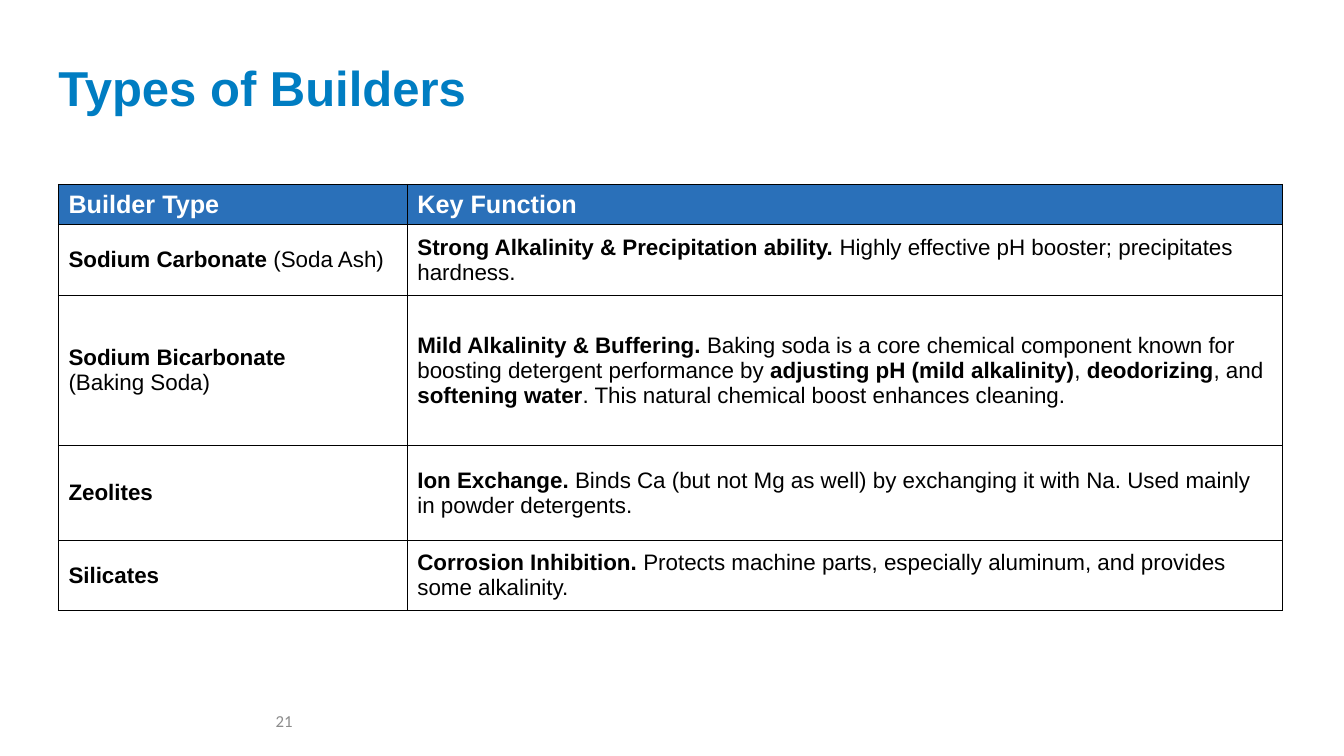
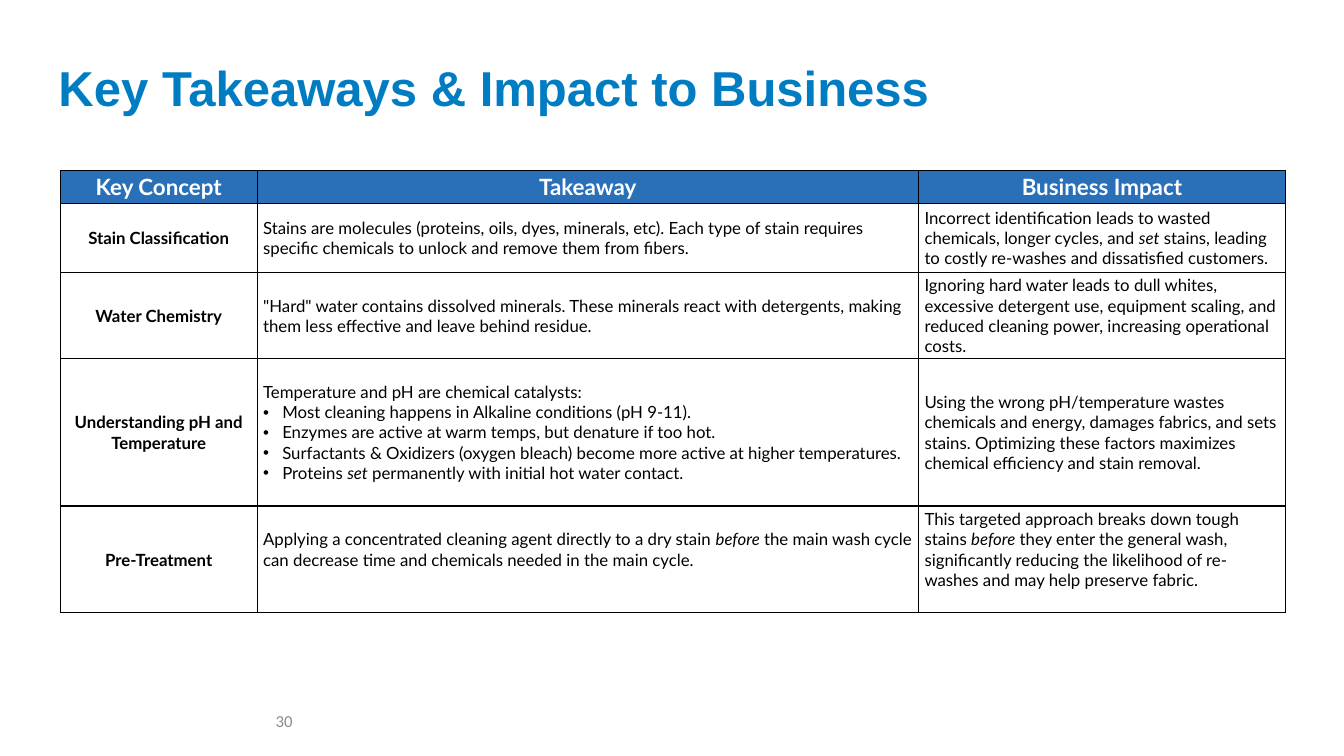
from lxml.etree import SubElement
from pptx import Presentation
from pptx.dml.color import RGBColor
from pptx.enum.text import MSO_ANCHOR, PP_ALIGN
from pptx.oxml import parse_xml
from pptx.oxml.ns import nsdecls, qn
from pptx.util import Inches, Pt

COLORS = {"title": "007DC2", "head": "2A70B9", "white": "FFFFFF",
          "text": "000000", "number": "8C8C8C"}

# Asterisks enclose the emphasised words; a leading "• " makes a bullet.
SLIDES = [
    {
        "title": "Types of Builders", "number": "21",
        "at": (0.58, 1.83), "cols": [3.46, 8.68],
        "heights": [0.38, 0.7, 1.49, 0.94, 0.7],
        "font": "Arial", "sizes": (18, 16), "mark": "bold",
        "pad": (0.1, 0.05), "center": False, "tail": {},
        "rows": [
            ["Builder Type", "Key Function"],
            ["*Sodium Carbonate* (Soda Ash)",
             "*Strong Alkalinity & Precipitation ability.* Highly effective pH booster; "
             "precipitates hardness."],
            ["*Sodium Bicarbonate*\n(Baking Soda)",
             "*Mild Alkalinity & Buffering.* Baking soda is a core chemical component known for "
             "boosting detergent performance by *adjusting pH (mild alkalinity)*, *deodorizing*, "
             "and *softening water*. This natural chemical boost enhances cleaning."],
            ["*Zeolites*",
             "*Ion Exchange.* Binds Ca (but not Mg as well) by exchanging it with Na. "
             "Used mainly in powder detergents."],
            ["*Silicates*",
             "*Corrosion Inhibition.* Protects machine parts, especially aluminum, and provides "
             "some alkalinity."],
        ],
    },
    {
        "title": "Key Takeaways & Impact to Business", "number": "30",
        "at": (0.6, 1.69), "cols": [1.95, 6.56, 3.64],
        "heights": [0.33, 0.68, 0.86, 1.46, 1.06],
        "font": "Lato", "sizes": (16, 12), "mark": "italic",
        "pad": (0.06, 0.03), "center": True, "tail": {(4, 1): 0.23, (4, 2): 0.23},
        "rows": [
            ["Key Concept", "Takeaway", "Business Impact"],
            ["Stain Classification",
             "Stains are molecules (proteins, oils, dyes, minerals, etc). Each type of stain "
             "requires specific chemicals to unlock and remove them from fibers.",
             "Incorrect identification leads to wasted chemicals, longer cycles, and *set* stains, "
             "leading to costly re-washes and dissatisfied customers."],
            ["Water Chemistry",
             "\"Hard\" water contains dissolved minerals. These minerals react with detergents, "
             "making them less effective and leave behind residue.",
             "Ignoring hard water leads to dull whites, excessive detergent use, equipment "
             "scaling, and reduced cleaning power, increasing operational costs."],
            ["Understanding pH and Temperature",
             "Temperature and pH are chemical catalysts:\n"
             "• Most cleaning happens in Alkaline conditions (pH 9-11).\n"
             "• Enzymes are active at warm temps, but denature if too hot.\n"
             "• Surfactants & Oxidizers (oxygen bleach) become more active at higher "
             "temperatures.\n"
             "• Proteins *set* permanently with initial hot water contact.",
             "Using the wrong pH/temperature wastes chemicals and energy, damages fabrics, and "
             "sets stains. Optimizing these factors maximizes chemical efficiency and stain "
             "removal."],
            ["Pre-Treatment",
             "Applying a concentrated cleaning agent directly to a dry stain *before* the main "
             "wash cycle can decrease time and chemicals needed in the main cycle.",
             "This targeted approach breaks down tough stains *before* they enter the general "
             "wash, significantly reducing the likelihood of re-washes and may help preserve "
             "fabric."],
        ],
    },
]


def style(font, name, size, color, bold=False):
    font.name, font.size, font.bold = name, Pt(size), bold
    font.color.rgb = RGBColor.from_string(COLORS[color])


def place(shape, left, top, width, height):
    shape.left, shape.top = Inches(left), Inches(top)
    shape.width, shape.height = Inches(width), Inches(height)


def add_title(slide, text):
    title = slide.shapes.title
    place(title, 0.48, 0.17, 10.51, 1.45)
    frame = title.text_frame
    frame.text = text
    frame.word_wrap = True
    frame.vertical_anchor = MSO_ANCHOR.MIDDLE
    para = frame.paragraphs[0]
    para.alignment, para.line_spacing = PP_ALIGN.LEFT, 0.9
    style(para.runs[0].font, "Arial", 35, "title", True)


def add_number(slide, text):
    box = slide.shapes.add_textbox(0, Inches(6.95), Inches(3), Inches(0.4))
    frame = box.text_frame
    frame.text = text
    frame.word_wrap = True
    frame.vertical_anchor = MSO_ANCHOR.MIDDLE
    para = frame.paragraphs[0]
    para.alignment = PP_ALIGN.RIGHT
    style(para.runs[0].font, "Calibri", 12, "number")


def add_bullet(para):
    props = para._p.get_or_add_pPr()
    props.set("marL", str(Inches(0.19)))
    props.set("indent", str(-Inches(0.19)))
    SubElement(props, qn("a:buFont"), typeface="Arial")
    SubElement(props, qn("a:buChar"), char="•")


def add_border(cell):
    props = cell._tc.get_or_add_tcPr()
    for side in "LRTB":
        props.append(parse_xml(
            f'<a:ln{side} {nsdecls("a")} w="12700"><a:solidFill>'
            f'<a:srgbClr val="{COLORS["text"]}"/></a:solidFill></a:ln{side}>'))


def fill_cell(cell, text, data, row, col):
    head = row == 0
    add_border(cell)
    if head:
        cell.fill.solid()
        cell.fill.fore_color.rgb = RGBColor.from_string(COLORS["head"])
    else:
        cell.fill.background()
    side, edge = data["pad"]
    cell.margin_left = cell.margin_right = Inches(side)
    cell.margin_top = Inches(edge)
    cell.margin_bottom = Inches(data["tail"].get((row, col), edge))
    cell.vertical_anchor = MSO_ANCHOR.MIDDLE
    center = data["center"] and (head or col == 0)
    size = data["sizes"][0 if head else 1]
    frame = cell.text_frame
    for i, line in enumerate(text.split("\n")):
        para = frame.add_paragraph() if i else frame.paragraphs[0]
        para.alignment = PP_ALIGN.CENTER if center else PP_ALIGN.LEFT
        if line.startswith("• "):
            add_bullet(para)
        for j, part in enumerate(line.removeprefix("• ").split("*")):
            if part:
                run = para.add_run()
                run.text = part
                style(run.font, data["font"], size, "white" if head else "text",
                      head or center)
                if j % 2:
                    setattr(run.font, data["mark"], True)


def add_grid(slide, data):
    rows, cols, heights = data["rows"], data["cols"], data["heights"]
    left, top = data["at"]
    table = slide.shapes.add_table(
        len(rows), len(cols), Inches(left), Inches(top),
        Inches(sum(cols)), Inches(sum(heights))).table
    table.first_row = table.horz_banding = False
    for col, width in zip(table.columns, cols):
        col.width = Inches(width)
    for row, height in zip(table.rows, heights):
        row.height = Inches(height)
    for r, texts in enumerate(rows):
        for c, text in enumerate(texts):
            fill_cell(table.cell(r, c), text, data, r, c)


def main():
    deck = Presentation()
    deck.slide_width, deck.slide_height = Inches(13.33), Inches(7.5)
    for data in SLIDES:
        slide = deck.slides.add_slide(deck.slide_layouts[5])
        add_number(slide, data["number"])
        add_grid(slide, data)
        add_title(slide, data["title"])
    deck.save("out.pptx")


if __name__ == "__main__":
    main()
